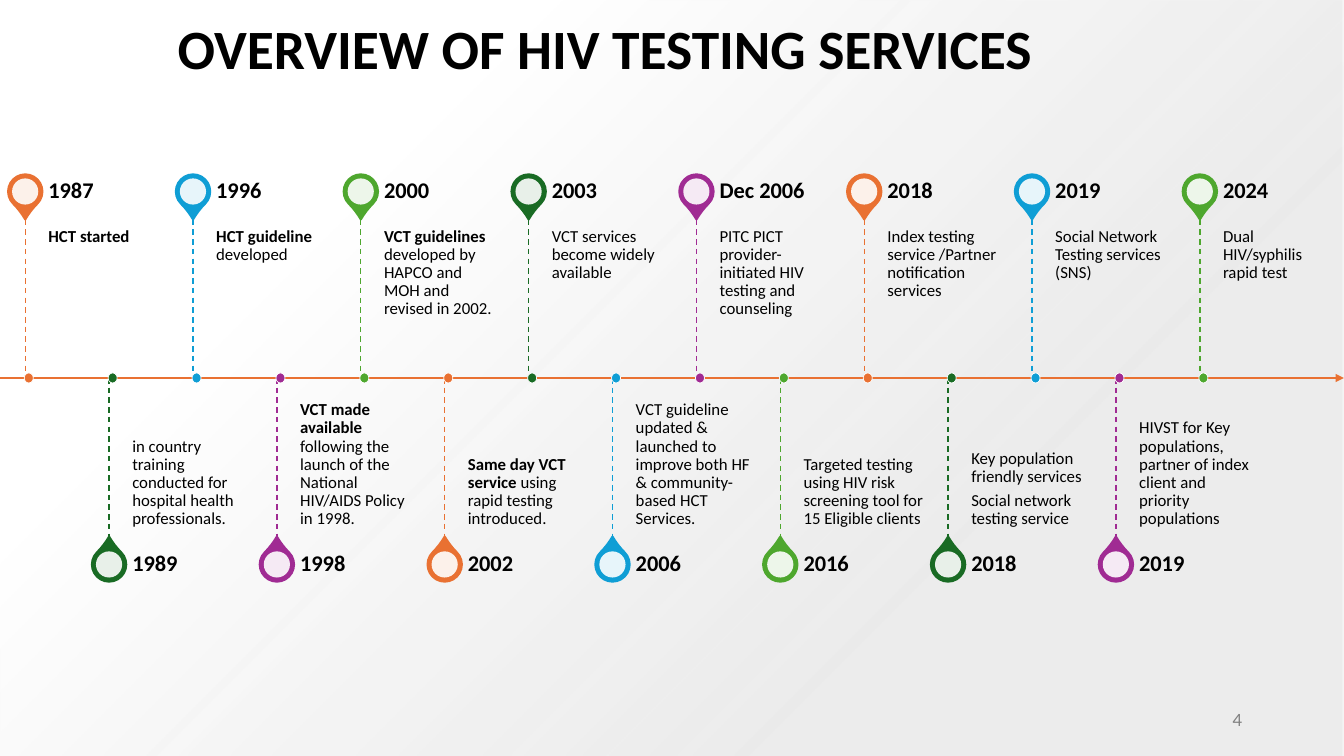
from dataclasses import dataclass

from lxml import etree
from pptx import Presentation
from pptx.dml.color import RGBColor
from pptx.enum.dml import MSO_LINE
from pptx.enum.shapes import MSO_CONNECTOR, MSO_SHAPE
from pptx.enum.text import MSO_ANCHOR, MSO_AUTO_SIZE, PP_ALIGN
from pptx.oxml import parse_xml
from pptx.oxml.ns import nsdecls, qn
from pptx.shapes.autoshape import Shape
from pptx.shapes.connector import Connector
from pptx.slide import Slide
from pptx.text.text import TextFrame
from pptx.util import Inches, Pt

TOP, MID, LOW = MSO_ANCHOR.TOP, MSO_ANCHOR.MIDDLE, MSO_ANCHOR.BOTTOM
LEFT, CENTER, RIGHT = PP_ALIGN.LEFT, PP_ALIGN.CENTER, PP_ALIGN.RIGHT
OVAL, DROP, RECT = MSO_SHAPE.OVAL, MSO_SHAPE.TEAR, MSO_SHAPE.RECTANGLE
LINE, DASH, FIXED = MSO_CONNECTOR.STRAIGHT, MSO_LINE.DASH, MSO_AUTO_SIZE.NONE


@dataclass(frozen=True)
class Theme:
    font: str = "Calibri"
    page_font: str = "Lato"
    ink: str = "000000"
    paper: str = "FFFFFF"
    shade: str = "E8E8E8"
    page: str = "808080"
    axis: str = "E97132"
    cycle: tuple[str, ...] = ("E97132", "196B24", "0F9ED5", "A02B93", "4EA72E")
    title_size: float = 39.6
    year_size: float = 16
    note_size: float = 12


@dataclass(frozen=True)
class Event:
    year: str
    note: str
    lead: str = ""


@dataclass(frozen=True)
class Side:
    """Heights and text setting of the events on one side of the axis."""
    pin: float
    turn: int
    year: float
    note: float
    stem: float
    anchor: MSO_ANCHOR
    inset: tuple[float, float, float, float]


THEME = Theme()
WIDTH, HEIGHT = 13.33, 7.5
AXIS = 3.75
STEP = 11.65 / 14
SIDES = (
    Side(1.73, 135, 1.62, 2.18, 2.18, TOP, (0, 0.08, 0.08, 0.12)),
    Side(5.43, 315, 5.32, AXIS, 5.32, LOW, (0, 0.12, 0, 0.08)),
)
EVENTS = (
    Event("1987", "", "HCT started"),
    Event("1989", "in country training conducted for hospital health professionals."),
    Event("1996", "developed", "HCT guideline "),
    Event("1998", "following the launch of the National HIV/AIDS Policy in 1998.",
          "VCT made available "),
    Event("2000", "developed by HAPCO and MOH and revised in 2002.", "VCT guidelines "),
    Event("2002", "using rapid testing introduced.", "Same day VCT service "),
    Event("2003", "VCT services become widely available"),
    Event("2006", "VCT guideline updated & launched to improve both HF "
                  "& community-based HCT Services."),
    Event("Dec 2006", "PITC PICT provider-initiated HIV testing and counseling"),
    Event("2016", "Targeted testing using HIV risk screening tool for 15 Eligible clients"),
    Event("2018", "Index testing service /Partner notification services"),
    Event("2018", "Key population friendly services\nSocial network testing service"),
    Event("2019", "Social Network Testing services (SNS)"),
    Event("2019", "HIVST for Key populations, partner of index client and priority populations"),
    Event("2024", "Dual HIV/syphilis rapid test"),
)


def rgb(color: str) -> RGBColor:
    return RGBColor.from_string(color)


def style(frame: TextFrame, size: float, inset: tuple[float, ...], anchor: MSO_ANCHOR,
          align: PP_ALIGN = LEFT, bold: bool = False, color: str = THEME.ink,
          font: str = THEME.font) -> None:
    frame.word_wrap, frame.auto_size = True, FIXED
    frame.vertical_anchor = anchor
    (frame.margin_left, frame.margin_top,
     frame.margin_right, frame.margin_bottom) = map(Inches, inset)
    for para in frame.paragraphs:
        para.alignment, para.line_spacing = align, 0.9
        para.space_before, para.space_after = Pt(0), Pt(size * 0.35)
        for run in para.runs:
            run.font.name, run.font.size = font, Pt(size)
            run.font.bold = bold
            run.font.color.rgb = rgb(color)


def add_text(slide: Slide, text: str, left: float, top: float,
             width: float, height: float) -> TextFrame:
    box = slide.shapes.add_textbox(*map(Inches, (left, top, width, height)))
    box.text_frame.text = text
    return box.text_frame


def add_form(slide: Slide, kind: MSO_SHAPE, left: float, top: float, width: float,
             height: float, fill: str, edge: str = "", weight: float = 0) -> Shape:
    """Add a filled shape, with an outline only if an edge colour is given."""
    form = slide.shapes.add_shape(kind, *map(Inches, (left, top, width, height)))
    form.shadow.inherit = False
    form.fill.solid()
    form.fill.fore_color.rgb = rgb(fill)
    if edge:
        form.line.color.rgb, form.line.width = rgb(edge), Pt(weight)
    else:
        form.line.fill.background()
    return form


def add_line(slide: Slide, start: tuple[float, float], end: tuple[float, float],
             color: str, weight: float) -> Connector:
    line = slide.shapes.add_connector(LINE, *map(Inches, start + end))
    line.line.color.rgb, line.line.width = rgb(color), Pt(weight)
    etree.SubElement(line.element.spPr, qn("a:effectLst"))
    return line


def add_back(slide: Slide) -> None:
    """Cover the slide with a round gradient that starts in the lower right corner."""
    back = add_form(slide, RECT, 0, 0, WIDTH, HEIGHT, THEME.paper)
    solid = back.element.spPr.find(qn("a:solidFill"))
    solid.getparent().replace(solid, parse_xml(
        f'<a:gradFill {nsdecls("a")} rotWithShape="1"><a:gsLst>'
        f'<a:gs pos="28000"><a:srgbClr val="{THEME.shade}"><a:alpha val="84000"/></a:srgbClr></a:gs>'
        f'<a:gs pos="74000"><a:srgbClr val="{THEME.paper}"/></a:gs></a:gsLst>'
        '<a:path path="circle"><a:fillToRect l="100000" t="100000"/></a:path></a:gradFill>'))


def add_title(slide: Slide, text: str) -> None:
    title = slide.shapes.title
    title.left, title.top, title.width, title.height = map(Inches, (0.25, 0.13, 11.5, 0.76))
    title.text_frame.text = text
    style(title.text_frame, THEME.title_size, (0.12, 0.06, 0.12, 0.06), MID, CENTER, True)
    tree = title.element.getparent()
    tree.remove(title.element)
    tree.append(title.element)


def add_axis(slide: Slide) -> None:
    axis = add_line(slide, (0, AXIS), (WIDTH, AXIS), THEME.axis, 1.5)
    etree.SubElement(axis.element.spPr.find(qn("a:ln")), qn("a:tailEnd"), type="triangle")


def add_event(slide: Slide, event: Event, left: float, side: Side, color: str) -> None:
    pin = add_form(slide, DROP, left, side.pin, 0.34, 0.34, color, color, 1.5)
    pin.adjustments[0], pin.rotation = 1.15, side.turn
    hole = add_form(slide, OVAL, left + 0.04, side.pin + 0.04, 0.26, 0.26, THEME.paper)
    tint = hole.element.spPr.find(qn("a:solidFill"))[0]
    etree.SubElement(tint, qn("a:alpha"), val="90000")

    note = add_text(slide, event.lead or event.note, left + 0.4, side.note, 1.19, 1.57)
    if event.lead and event.note:
        note.paragraphs[0].add_run().text = event.note
    style(note, THEME.note_size, side.inset, side.anchor)
    if event.lead:
        note.paragraphs[0].runs[0].font.bold = True
    year = add_text(slide, event.year, left + 0.4, side.year, 1.19, 0.55)
    style(year, THEME.year_size, (0, 0, 0.11, 0), MID, bold=True)

    stem = left + 0.17
    ends = sorted((side.stem, AXIS))
    line = add_line(slide, (stem, ends[0]), (stem, ends[1]), color, 1)
    line.line.dash_style = DASH
    add_form(slide, OVAL, left + 0.16, AXIS - 0.05, 0.09, 0.1, color, THEME.paper, 0.5)


def main() -> None:
    deck = Presentation()
    deck.slide_width, deck.slide_height = Inches(WIDTH), Inches(HEIGHT)
    slide = deck.slides.add_slide(deck.slide_layouts[5])
    add_back(slide)
    add_title(slide, "OVERVIEW OF HIV TESTING SERVICES")
    page = add_text(slide, "4", 9.42, 6.95, 3, 0.4)
    style(page, THEME.note_size, (0.1, 0.05, 0.1, 0.05), MID, RIGHT,
          color=THEME.page, font=THEME.page_font)
    add_axis(slide)
    for i, event in enumerate(EVENTS):
        color = THEME.cycle[i % len(THEME.cycle)]
        add_event(slide, event, 0.08 + i * STEP, SIDES[i % 2], color)
    deck.save("out.pptx")


if __name__ == "__main__":
    main()
